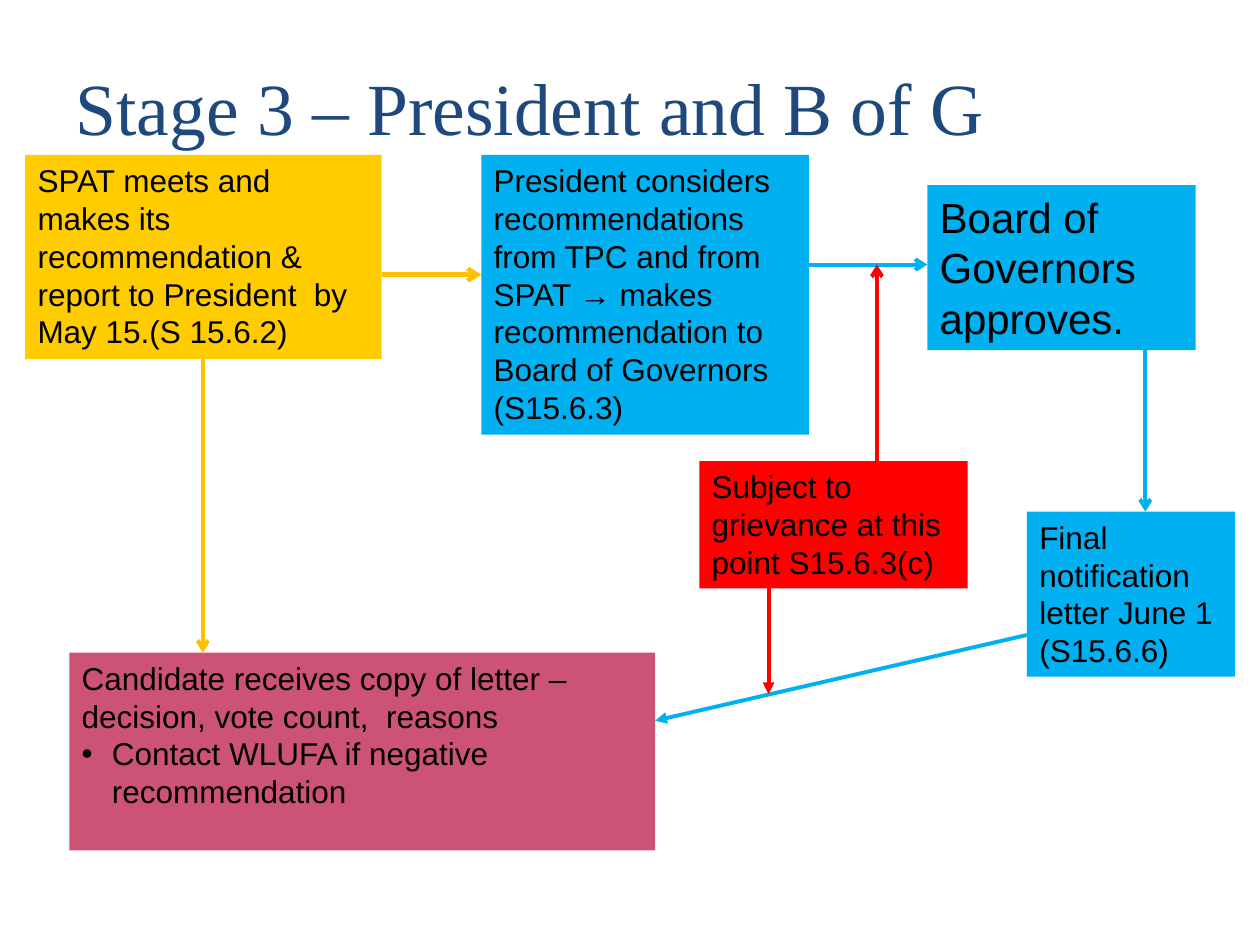
from lxml import etree
from pptx import Presentation
from pptx import util as u
from pptx.dml.color import RGBColor
from pptx.enum import shapes, text
from pptx.oxml.ns import qn

THEME = {
    "title": "1F497D", "text": "000000", "gold": "FFCC00", "amber": "FFC000",
    "blue": "00B0F0", "rose": "CD5376", "red": "FF0000",
    "title_font": "Times New Roman", "body_font": "Arial",
    "title_size": 42, "large_size": 24, "body_size": 18,
}


def style(font, name, size, color):
    formats = {"name": THEME[name], "size": u.Pt(THEME[size])}
    for key, value in formats.items():
        setattr(font, key, value)
    font.color.rgb = RGBColor.from_string(THEME[color])


prs = Presentation()
prs.slide_width, prs.slide_height = u.Inches(10), u.Inches(7.5)
s = prs.slides.add_slide(prs.slide_layouts[5])

title = s.shapes.title
frame = {"left": 0.5, "top": 0.3, "width": 9, "height": 1.09}
for key, value in frame.items():
    setattr(title, key, u.Inches(value))
tf = title.text_frame
tf.text = "Stage 3 – President and B of G"
tf.vertical_anchor = text.MSO_ANCHOR.MIDDLE
tf.auto_size = text.MSO_AUTO_SIZE.NONE
p = tf.paragraphs[0]
p.alignment = text.PP_ALIGN.LEFT
style(p.runs[0].font, "title_font", "title_size", "title")

boxes = [
    (0.2, 1.23, 2.83, 1.62, "gold", "body_size",
     ["SPAT meets and makes its recommendation & report to President  by May 15.(S 15.6.2)"]),
    (3.82, 1.23, 2.6, 2.22, "blue", "body_size",
     ["President considers recommendations from TPC and from SPAT → makes "
      "recommendation to Board of Governors (S15.6.3)"]),
    (7.36, 1.47, 2.13, 1.31, "blue", "large_size", ["Board of Governors approves."]),
    (8.15, 4.06, 1.65, 1.31, "blue", "body_size",
     ["Final notification letter June 1", "(S15.6.6)"]),
    (0.55, 5.18, 4.65, 1.57, "rose", "body_size",
     ["Candidate receives copy of letter – decision, vote count,  reasons",
      "• Contact WLUFA if negative recommendation"]),
    (5.55, 3.66, 2.13, 1.01, "red", "body_size",
     ["Subject to grievance at this point S15.6.3(c)"]),
]
for left, top, width, height, color, size, lines in boxes:
    sp = s.shapes.add_shape(
        shapes.MSO_SHAPE.RECTANGLE,
        u.Inches(left), u.Inches(top), u.Inches(width), u.Inches(height))
    sp.shadow.inherit = False
    sp.fill.solid()
    sp.fill.fore_color.rgb = RGBColor.from_string(THEME[color])
    sp.line.fill.background()
    tf = sp.text_frame
    tf.word_wrap = True
    tf.vertical_anchor = text.MSO_ANCHOR.TOP
    for i, line in enumerate(lines):
        p = tf.paragraphs[0] if i == 0 else tf.add_paragraph()
        p.alignment = text.PP_ALIGN.LEFT
        if line.startswith("• "):
            pPr = p._p.get_or_add_pPr()
            pPr.set("marL", str(u.Inches(0.24)))
            pPr.set("indent", str(-u.Inches(0.24)))
            etree.SubElement(pPr, qn("a:buFont")).set("typeface", THEME["body_font"])
            etree.SubElement(pPr, qn("a:buChar")).set("char", "•")
        r = p.add_run()
        r.text = line.removeprefix("• ")
        style(r.font, "body_font", size, "text")

arrows = [
    (3.03, 2.18, 3.82, 2.18, "amber", 2.5, "arrow"),
    (6.42, 2.1, 7.36, 2.1, "blue", 2.25, "arrow"),
    (9.09, 2.78, 9.09, 4.06, "blue", 2.25, "arrow"),
    (1.61, 2.85, 1.61, 5.18, "amber", 2.25, "arrow"),
    (6.96, 3.75, 6.96, 2.1, "red", 2.25, "arrow"),
    (8.15, 5.04, 5.2, 5.72, "blue", 2.25, "triangle"),
    (6.1, 4.67, 6.1, 5.51, "red", 2.25, "triangle"),
]
for x1, y1, x2, y2, color, weight, head in arrows:
    arrow = s.shapes.add_connector(
        shapes.MSO_CONNECTOR.STRAIGHT,
        u.Inches(x1), u.Inches(y1), u.Inches(x2), u.Inches(y2))
    arrow.line.color.rgb = RGBColor.from_string(THEME[color])
    arrow.line.width = u.Pt(weight)
    etree.SubElement(arrow.line._get_or_add_ln(), qn("a:tailEnd")).set("type", head)
    etree.SubElement(arrow._element.spPr, qn("a:effectLst"))

prs.save("out.pptx")
